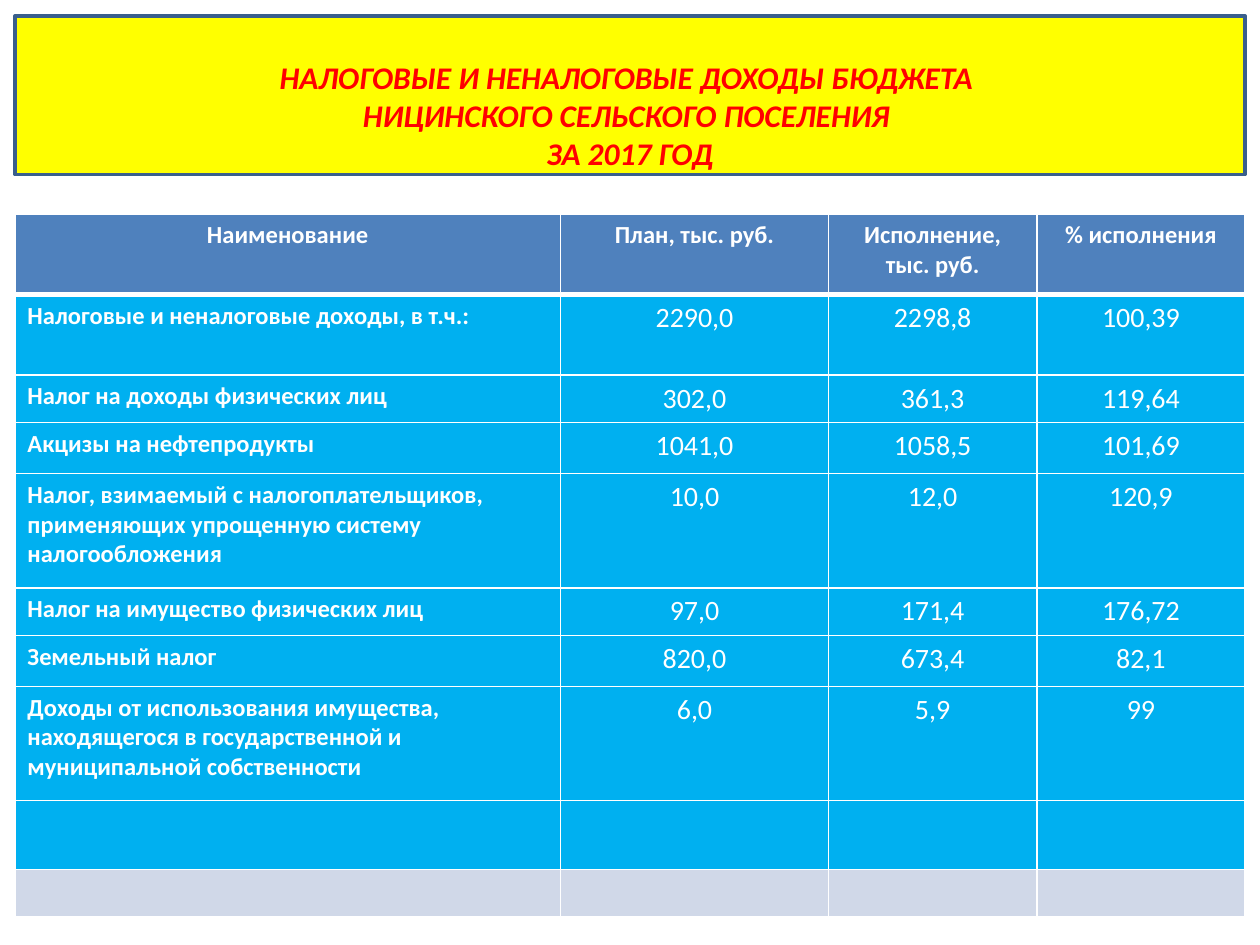
import dataclasses

import lxml.etree
import pptx
import pptx.dml.color
import pptx.enum.text
import pptx.oxml.ns
import pptx.util

Cm = pptx.util.Cm
Pt = pptx.util.Pt
RGBColor = pptx.dml.color.RGBColor
Align = pptx.enum.text.PP_ALIGN
qn = pptx.oxml.ns.qn

WHITE = RGBColor(0xFF, 0xFF, 0xFF)
RED = RGBColor(0xFF, 0x00, 0x00)
YELLOW = RGBColor(0xFF, 0xFF, 0x00)
OUTLINE = RGBColor(0x3A, 0x5F, 0x8C)
HEADER_BLUE = RGBColor(0x4F, 0x81, 0xBD)
SKY_BLUE = RGBColor(0x00, 0xB0, 0xF0)
PALE_BLUE = RGBColor(0xD0, 0xD8, 0xE8)

FONT = "Calibri"
LEFT, WIDTH = Cm(0.3), Cm(24.8)
COLUMN_WIDTHS = (11, 5.4, 4.2, 4.2)
TITLE_LINES = (
    "НАЛОГОВЫЕ И НЕНАЛОГОВЫЕ ДОХОДЫ БЮДЖЕТА ",
    "НИЦИНСКОГО СЕЛЬСКОГО ПОСЕЛЕНИЯ ",
    "ЗА 2017 ГОД",
)


@dataclasses.dataclass(frozen=True)
class Row:
    height: float
    texts: tuple[str, ...] = ("",) * 4
    fill: RGBColor = SKY_BLUE
    header: bool = False


ROWS = (
    Row(1.62, ("Наименование", "План, тыс. руб.", "Исполнение, тыс. руб.", "% исполнения"), HEADER_BLUE, True),
    Row(1.62, ("Налоговые и неналоговые доходы, в т.ч.:", "2290,0", "2298,8", "100,39")),
    Row(0.96, ("Налог на доходы физических лиц", "302,0", "361,3", "119,64")),
    Row(1.03, ("Акцизы на нефтепродукты", "1041,0", "1058,5", "101,69")),
    Row(2.3, ("Налог, взимаемый с налогоплательщиков, применяющих упрощенную систему налогообложения",
              "10,0", "12,0", "120,9")),
    Row(0.96, ("Налог на имущество физических лиц", "97,0", "171,4", "176,72")),
    Row(1.03, ("Земельный налог", "820,0", "673,4", "82,1")),
    Row(2.3, ("Доходы от использования имущества, находящегося в государственной и муниципальной собственности",
              "6,0", "5,9", "99")),
    Row(1.39),
    Row(0.96, fill=PALE_BLUE),
)


def add_span(para, text: str, size: int, color: RGBColor, bold: bool, italic: bool = False) -> None:
    span = para.add_run()
    span.text = text
    span.font.name = FONT
    span.font.size = Pt(size)
    span.font.color.rgb = color
    span.font.bold = bold
    span.font.italic = italic


def add_title(page) -> None:
    box = page.shapes.title
    box.left, box.top, box.width, box.height = LEFT, Cm(0.32), WIDTH, Cm(3.2)
    box.fill.solid()
    box.fill.fore_color.rgb = YELLOW
    box.line.color.rgb = OUTLINE
    box.line.width = Pt(2)
    frame = box.text_frame
    frame.word_wrap = True
    frame.auto_size = pptx.enum.text.MSO_AUTO_SIZE.NONE
    frame.vertical_anchor = pptx.enum.text.MSO_ANCHOR.TOP
    frame.margin_top, frame.margin_bottom = Cm(0.85), 0
    for index, line in enumerate(TITLE_LINES):
        para = frame.add_paragraph() if index else frame.paragraphs[0]
        para.alignment = Align.CENTER
        add_span(para, line, 18, RED, True, True)


def set_borders(cell, top: int, bottom: int) -> None:
    properties = cell._tc.get_or_add_tcPr()
    for index, (side, width) in enumerate((("L", 1), ("R", 1), ("T", top), ("B", bottom))):
        border = lxml.etree.Element(qn(f"a:ln{side}"), w=str(Pt(width)))
        fill = lxml.etree.SubElement(border, qn("a:solidFill"))
        lxml.etree.SubElement(fill, qn("a:srgbClr"), val=str(WHITE))
        properties.insert(index, border)


def fill_cell(cell, row: Row, column: int, top: int) -> None:
    cell.fill.solid()
    cell.fill.fore_color.rgb = row.fill
    set_borders(cell, top, 3 if row.header else 1)
    para = cell.text_frame.paragraphs[0]
    para.alignment = Align.CENTER if row.header or column else Align.LEFT
    text = row.texts[column]
    if text:
        strong = row.header or column == 0
        add_span(para, text, 14 if strong else 16, WHITE, strong)
    else:
        para._p.get_or_add_endParaRPr().set("sz", "1400")


def add_income_table(page) -> None:
    height = Cm(sum(row.height for row in ROWS))
    table = page.shapes.add_table(len(ROWS), len(COLUMN_WIDTHS), LEFT, Cm(4.32), WIDTH, height).table
    for column, width in zip(table.columns, COLUMN_WIDTHS):
        column.width = Cm(width)
    for index, row in enumerate(ROWS):
        table.rows[index].height = Cm(row.height)
        for column in range(len(COLUMN_WIDTHS)):
            fill_cell(table.cell(index, column), row, column, 3 if index == 1 else 1)


def main() -> None:
    deck = pptx.Presentation()
    deck.slide_width, deck.slide_height = Cm(25.4), Cm(19.05)
    page = deck.slides.add_slide(deck.slide_layouts[5])
    add_title(page)
    add_income_table(page)
    deck.save("out.pptx")


if __name__ == "__main__":
    main()
